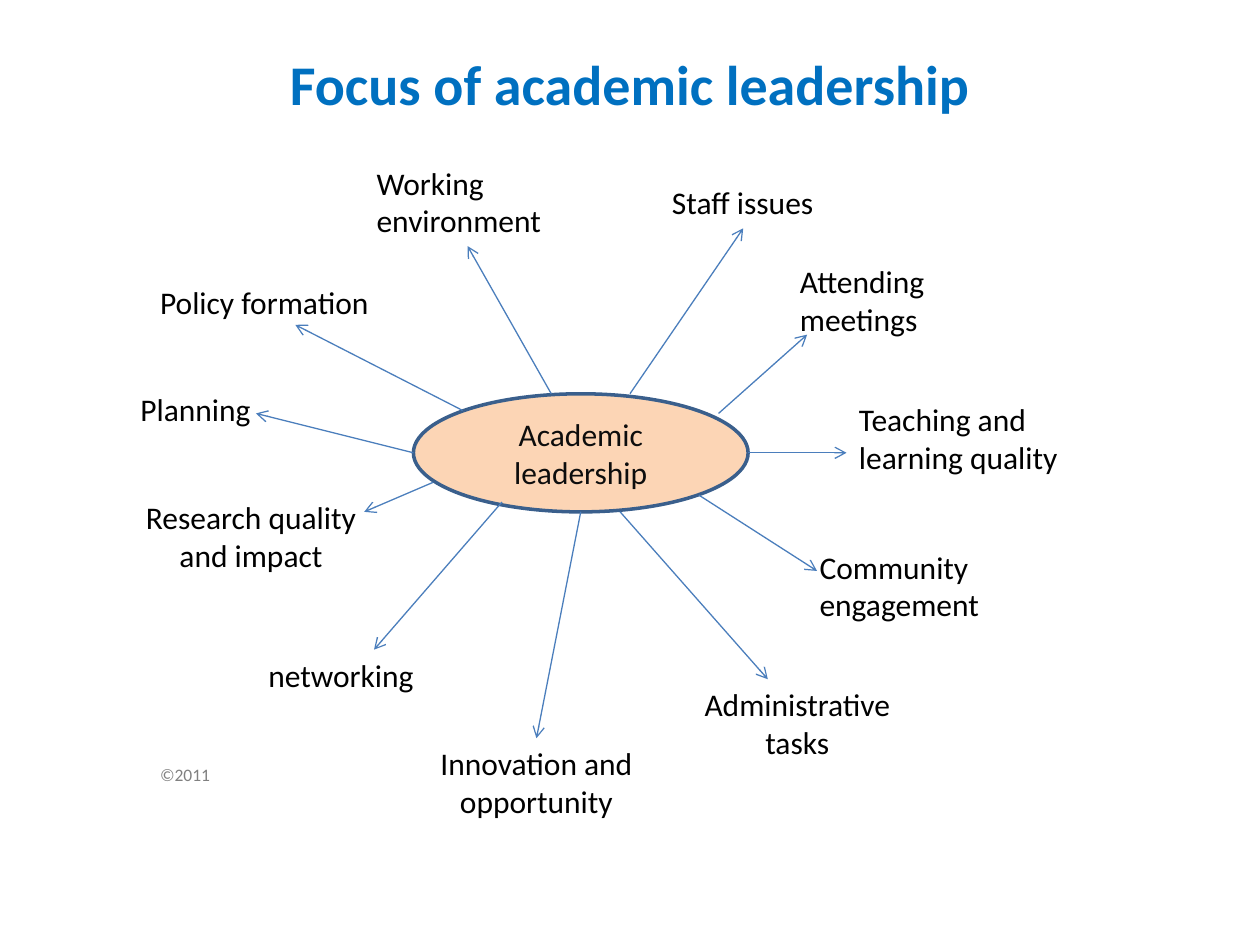
from lxml.etree import SubElement
from pptx import Presentation
from pptx.dml.color import RGBColor
from pptx.enum.shapes import MSO_CONNECTOR as Connector, MSO_SHAPE as Shape
from pptx.enum.text import MSO_ANCHOR as Anchor, PP_ALIGN as Align
from pptx.oxml.ns import qn
from pptx.util import Inches, Pt

BLACK = RGBColor(0x00, 0x00, 0x00)
NEAR_BLACK = RGBColor(0x0D, 0x0D, 0x0D)
GRAY = RGBColor(0x80, 0x80, 0x80)
TITLE_BLUE = RGBColor(0x00, 0x70, 0xC0)
ARROW_BLUE = RGBColor(0x4B, 0x7E, 0xBC)
OUTLINE_BLUE = RGBColor(0x3A, 0x5F, 0x8C)
PEACH = RGBColor(0xFC, 0xD5, 0xB5)

WIDTH, HEIGHT = Inches(10), Inches(7.5)
COLUMNS = 128
CELL = WIDTH / COLUMNS
ONE_LINE, TWO_LINES = 5, 9

TOPICS = [
    ("Policy formation", (15, 28.1, 27, ONE_LINE), Align.LEFT, (47, 41.7), (30, 33)),
    ("Working environment", (37, 16, 21, TWO_LINES), Align.LEFT, (56, 40), (47.5, 25)),
    ("Staff issues", (67, 18, 17, ONE_LINE), Align.LEFT, (64, 40), (75.5, 23.2)),
    ("Planning", (13, 39, 29, ONE_LINE), Align.LEFT, (42, 46), (26, 42)),
    ("Attending meetings", (80, 26, 20, TWO_LINES), Align.LEFT, (73, 42), (82, 34)),
    ("Teaching and learning quality", (86, 40, 24, TWO_LINES), Align.LEFT, (76, 46), (86, 46)),
    ("Research quality\nand impact", (13, 50, 25, TWO_LINES), Align.CENTER, (44, 49), (37, 52)),
    ("Community engagement", (82, 55, 27, TWO_LINES), Align.LEFT, (71, 50.3), (83, 58)),
    ("networking", (26, 66, 19, ONE_LINE), Align.LEFT, (51, 51), (38, 66)),
    ("Administrative tasks", (68, 69, 26, TWO_LINES), Align.CENTER, (63, 52), (78, 69)),
    ("Innovation and opportunity", (41, 75, 27, TWO_LINES), Align.CENTER, (59, 52), (54.5, 75)),
]


def cells(*counts):
    return [round(count * CELL) for count in counts]


def write(shape, text, size, color, align, anchor=Anchor.TOP, bold=False):
    frame = shape.text_frame
    frame.word_wrap = True
    frame.vertical_anchor = anchor
    frame.text = text
    for paragraph in frame.paragraphs:
        paragraph.alignment = align
        font = paragraph.font
        font.name, font.size, font.bold = "Calibri", Pt(size), bold
        font.color.rgb = color


def add_label(slide, text, box, align=Align.LEFT, size=18, color=BLACK):
    write(slide.shapes.add_textbox(*cells(*box)), text, size, color, align)


def add_title(slide, text):
    box = slide.shapes.add_textbox(*cells(6.4, 3.8, 115.2, 9.2))
    write(box, text, 32, TITLE_BLUE, Align.CENTER, Anchor.MIDDLE, True)


def add_hub(slide, text):
    ellipse = slide.shapes.add_shape(Shape.OVAL, *cells(42, 40, 34, 12))
    ellipse.shadow.inherit = False
    ellipse.fill.solid()
    ellipse.fill.fore_color.rgb = PEACH
    ellipse.line.color.rgb = OUTLINE_BLUE
    ellipse.line.width = Pt(2)
    write(ellipse, text, 18, NEAR_BLACK, Align.CENTER, Anchor.MIDDLE)


def add_arrow(slide, start, end):
    arrow = slide.shapes.add_connector(Connector.STRAIGHT, *cells(*start, *end))
    arrow.line.color.rgb = ARROW_BLUE
    arrow.line.width = Pt(0.75)
    SubElement(arrow.line._get_or_add_ln(), qn("a:tailEnd"), type="arrow")
    SubElement(arrow._element.spPr, qn("a:effectLst"))


def main():
    presentation = Presentation()
    presentation.slide_width, presentation.slide_height = WIDTH, HEIGHT
    slide = presentation.slides.add_slide(presentation.slide_layouts[6])
    add_title(slide, "Focus of academic leadership")
    for text, box, align, _, _ in TOPICS:
        add_label(slide, text, box, align)
    add_hub(slide, "Academic leadership")
    for _, _, _, start, end in TOPICS:
        add_arrow(slide, start, end)
    add_label(slide, "©2011", (15, 77, 18, 7.3), size=10, color=GRAY)
    presentation.save("out.pptx")


if __name__ == "__main__":
    main()
